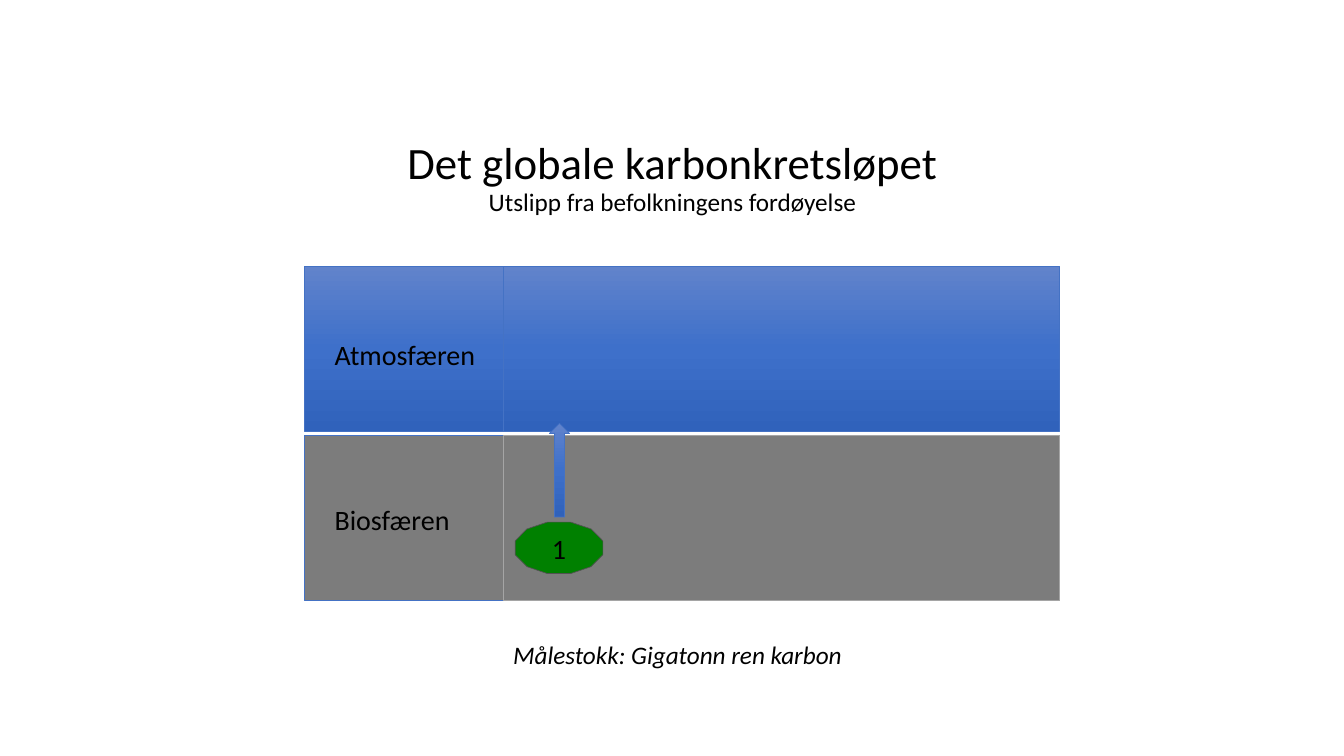
from copy import deepcopy

from pptx import Presentation
from pptx.dml.color import RGBColor
from pptx.enum.shapes import MSO_SHAPE
from pptx.enum.text import MSO_ANCHOR, MSO_AUTO_SIZE, PP_ALIGN
from pptx.oxml.ns import qn
from pptx.util import Inches, Pt

RECTANGLE, UP_ARROW, DODECAGON = MSO_SHAPE.RECTANGLE, MSO_SHAPE.UP_ARROW, MSO_SHAPE.DODECAGON
CENTER = PP_ALIGN.CENTER
BOTTOM, MIDDLE = MSO_ANCHOR.BOTTOM, MSO_ANCHOR.MIDDLE
FIT_SHAPE, NO_AUTO_SIZE = MSO_AUTO_SIZE.SHAPE_TO_FIT_TEXT, MSO_AUTO_SIZE.NONE

BLACK = RGBColor(0x00, 0x00, 0x00)
BLUE = RGBColor(0x44, 0x72, 0xC4)
GRAY = RGBColor(0x7C, 0x7C, 0x7C)
LIGHT_GRAY = RGBColor(0xA5, 0xA5, 0xA5)
DARK_GRAY = RGBColor(0x52, 0x52, 0x52)
GREEN = RGBColor(0x00, 0x80, 0x00)
SKY = [RGBColor(0x61, 0x83, 0xCB), RGBColor(0x3E, 0x70, 0xCA), RGBColor(0x30, 0x62, 0xBB)]

TITLE_ONLY_LAYOUT = 5


class CarbonSlide:
    font_name = "Calibri"
    line_width = Pt(0.5)

    def __init__(self, presentation):
        self.slide = presentation.slides.add_slide(presentation.slide_layouts[TITLE_ONLY_LAYOUT])

    def add_run(self, paragraph, text, size, italic=None):
        run = paragraph.add_run()
        run.text = text
        run.font.name = self.font_name
        run.font.size = Pt(size)
        run.font.italic = italic
        run.font.color.rgb = BLACK
        return run

    def title(self, heading, subheading, left, top, width, height):
        shape = self.slide.shapes.title
        shape.left, shape.top = Inches(left), Inches(top)
        shape.width, shape.height = Inches(width), Inches(height)
        frame = shape.text_frame
        frame.auto_size = NO_AUTO_SIZE
        frame.vertical_anchor = BOTTOM
        paragraph = frame.paragraphs[0]
        paragraph.alignment = CENTER
        paragraph.line_spacing = 0.9
        heading_run = self.add_run(paragraph, heading, 32)
        paragraph.add_line_break()
        # The break takes the heading's size instead of the template's.
        line_break = paragraph._p.find(qn("a:br"))
        line_break.append(deepcopy(heading_run._r.find(qn("a:rPr"))))
        self.add_run(paragraph, subheading, 18)

    def shape(self, kind, left, top, width, height, fill, line):
        """Add a preset shape; a list of colours as fill gives a downward gradient."""
        shape = self.slide.shapes.add_shape(
            kind, Inches(left), Inches(top), Inches(width), Inches(height))
        shape.shadow.inherit = False
        if isinstance(fill, list):
            self.gradient(shape, fill)
        else:
            shape.fill.solid()
            shape.fill.fore_color.rgb = fill
        shape.line.color.rgb = line
        shape.line.width = self.line_width
        return shape

    def gradient(self, shape, colors):
        shape.fill.gradient()
        shape.fill.gradient_angle = 270
        stop_list = shape._element.spPr.find(qn("a:gradFill")).find(qn("a:gsLst"))
        while len(stop_list) < len(colors):
            stop_list.append(deepcopy(stop_list[0]))
        for index, (stop, color) in enumerate(zip(shape.fill.gradient_stops, colors)):
            stop.position = index / (len(colors) - 1)
            stop.color.rgb = color

    def centered_text(self, shape, text, size):
        frame = shape.text_frame
        frame.vertical_anchor = MIDDLE
        paragraph = frame.paragraphs[0]
        paragraph.alignment = CENTER
        self.add_run(paragraph, text, size)

    def label(self, text, left, top, width, height, size, italic=None):
        box = self.slide.shapes.add_textbox(
            Inches(left), Inches(top), Inches(width), Inches(height))
        box.text_frame.word_wrap = True
        box.text_frame.auto_size = FIT_SHAPE
        self.add_run(box.text_frame.paragraphs[0], text, size, italic)


def main():
    presentation = Presentation()
    presentation.slide_width = Inches(13.33)
    presentation.slide_height = Inches(7.5)

    carbon = CarbonSlide(presentation)
    carbon.title("Det globale karbonkretsløpet", "Utslipp fra befolkningens fordøyelse",
                 2.42, 0.59, 8.5, 1.61)

    atmosphere_top, biosphere_top, layer_height = 2.64, 4.32, 1.64
    columns = ((3.02, 1.97, BLUE), (4.99, 5.52, LIGHT_GRAY))
    for left, width, biosphere_line in columns:
        carbon.shape(RECTANGLE, left, atmosphere_top, width, layer_height, SKY, BLUE)
        carbon.shape(RECTANGLE, left, biosphere_top, width, layer_height, GRAY, biosphere_line)

    carbon.label("Atmosfæren", 3.22, 3.3, 1.64, 0.44, 20)
    carbon.label("Biosfæren", 3.22, 4.94, 1.46, 0.44, 20)

    carbon.shape(UP_ARROW, 5.45, 4.2, 0.2, 0.93, SKY, BLUE)
    emission = carbon.shape(DODECAGON, 5.11, 5.18, 0.87, 0.51, GREEN, DARK_GRAY)
    carbon.centered_text(emission, "1", 20)

    carbon.label("Målestokk: Gigatonn ren karbon", 4.99, 6.29, 6.8, 0.4, 18, italic=True)
    presentation.save("out.pptx")


if __name__ == "__main__":
    main()
